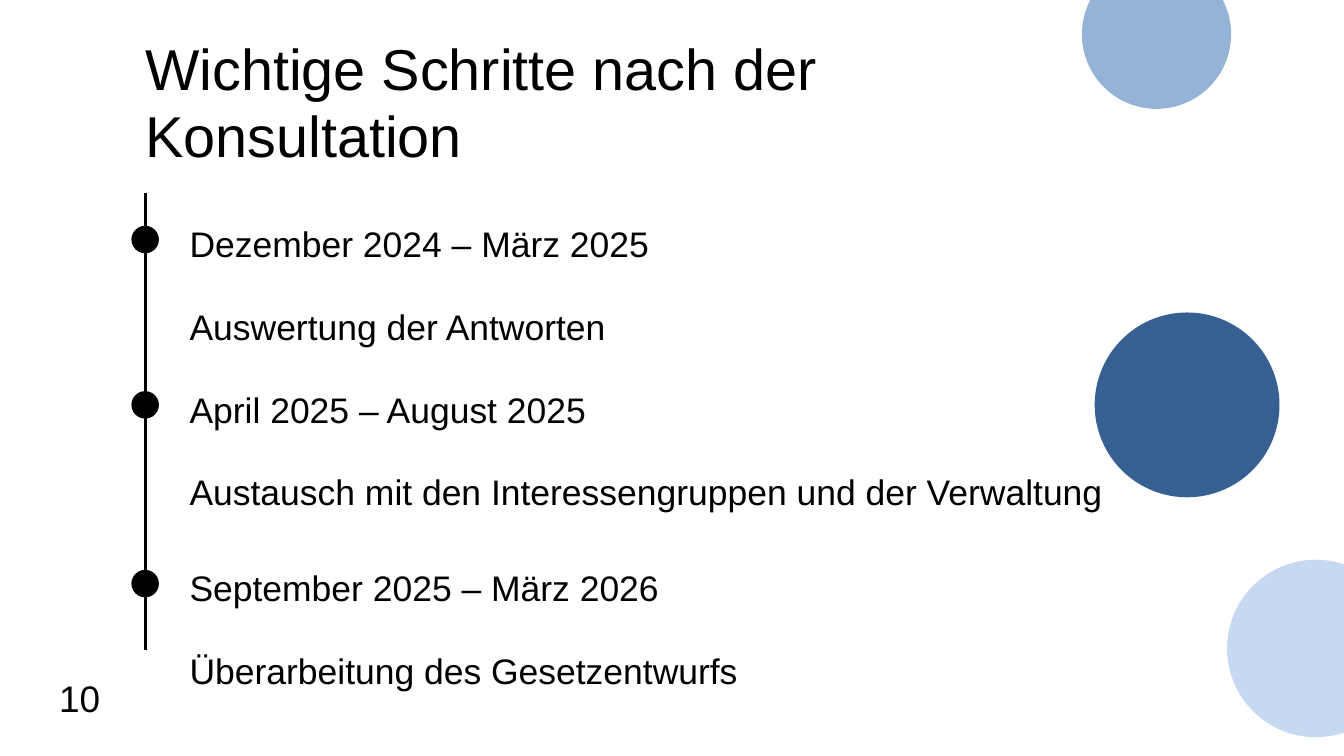
from lxml import etree
from pptx import Presentation
from pptx.dml.color import RGBColor
from pptx.enum import shapes, text
from pptx.oxml import ns
from pptx.util import Inches, Pt

COLORS = {"ink": "000000", "pale": "C6D9F1", "light": "95B3D7", "dark": "376092"}
FONT = "Arial"

# Left, top, diameter, colour
CIRCLES = [
    (18.26, 8.33, 2.64, "pale"),
    (16.1, -0.6, 2.22, "light"),
    (16.29, 4.65, 2.75, "dark"),
]

# Top of the text, period, task
STEPS = [
    (3.33, "Dezember 2024 – März 2025", "Auswertung der Antworten"),
    (5.79, "April 2025 – August 2025",
     "Austausch mit den Interessengruppen und der Verwaltung"),
    (8.45, "September 2025 – März 2026", "Überarbeitung des Gesetzentwurfs"),
]


def place(shape, left, top, width, height):
    shape.left, shape.top = Inches(left), Inches(top)
    shape.width, shape.height = Inches(width), Inches(height)


def fill_text(shape, lines, size, spacing, gap=0):
    """Write one paragraph per line, with a gap between paragraphs."""
    frame = shape.text_frame
    frame.text = "\n".join(lines)
    frame.word_wrap = True
    frame.auto_size = text.MSO_AUTO_SIZE.NONE
    frame.vertical_anchor = text.MSO_ANCHOR.TOP
    frame.margin_left = frame.margin_right = 0
    frame.margin_top = frame.margin_bottom = 0
    for number, para in enumerate(frame.paragraphs):
        para.alignment = text.PP_ALIGN.LEFT
        para.line_spacing = Pt(spacing)
        para.space_before = Pt(gap if number else 0)
        for span in para.runs:
            span.font.name = FONT
            span.font.size = Pt(size)
            span.font.color.rgb = RGBColor.from_string(COLORS["ink"])


def add_text(page, box, lines, size, spacing, gap=0):
    shape = page.shapes.add_textbox(*map(Inches, box))
    fill_text(shape, lines, size, spacing, gap)


def add_circle(page, left, top, diameter, color):
    circle = page.shapes.add_shape(
        shapes.MSO_SHAPE.OVAL, Inches(left), Inches(top),
        Inches(diameter), Inches(diameter))
    circle.shadow.inherit = False
    circle.fill.solid()
    circle.fill.fore_color.rgb = RGBColor.from_string(COLORS[color])
    circle.line.fill.background()


def add_title(page, box):
    title = page.shapes.title
    place(title, *box)
    fill_text(title, ["Wichtige Schritte nach der Konsultation"], 61.7, 71.6)


def add_timeline(page, box):
    left, top, width, height = box
    dot, indent = 0.41, 0.66

    # Vertical axis
    axis = page.shapes.add_connector(
        shapes.MSO_CONNECTOR.STRAIGHT, Inches(left), Inches(top),
        Inches(left), Inches(top + height))
    axis.line.color.rgb = RGBColor.from_string(COLORS["ink"])
    axis.line.width = Pt(3)
    etree.SubElement(axis._element.spPr, ns.qn("a:effectLst"))

    # Dots with period and task
    for step_top, period, task in STEPS:
        add_circle(page, left - dot / 2, step_top + 0.03, dot, "ink")
        add_text(page, (left + indent, step_top, width - indent, 1.85),
                 [period, task], 38, 44.1, gap=44.1)


def main():
    deck = Presentation()
    deck.slide_width, deck.slide_height = Inches(20), Inches(11.25)
    page = deck.slides.add_slide(deck.slide_layouts[5])

    # Decoration
    for circle in CIRCLES:
        add_circle(page, *circle)

    # Content
    add_title(page, (2.16, 0.53, 12.49, 2.02))
    add_timeline(page, (2.16, 2.87, 14.75, 6.8))

    # Page number
    add_text(page, (0.88, 9.94, 1.29, 0.74), ["10"], 39.6, 55.5)

    deck.save("out.pptx")


if __name__ == "__main__":
    main()
